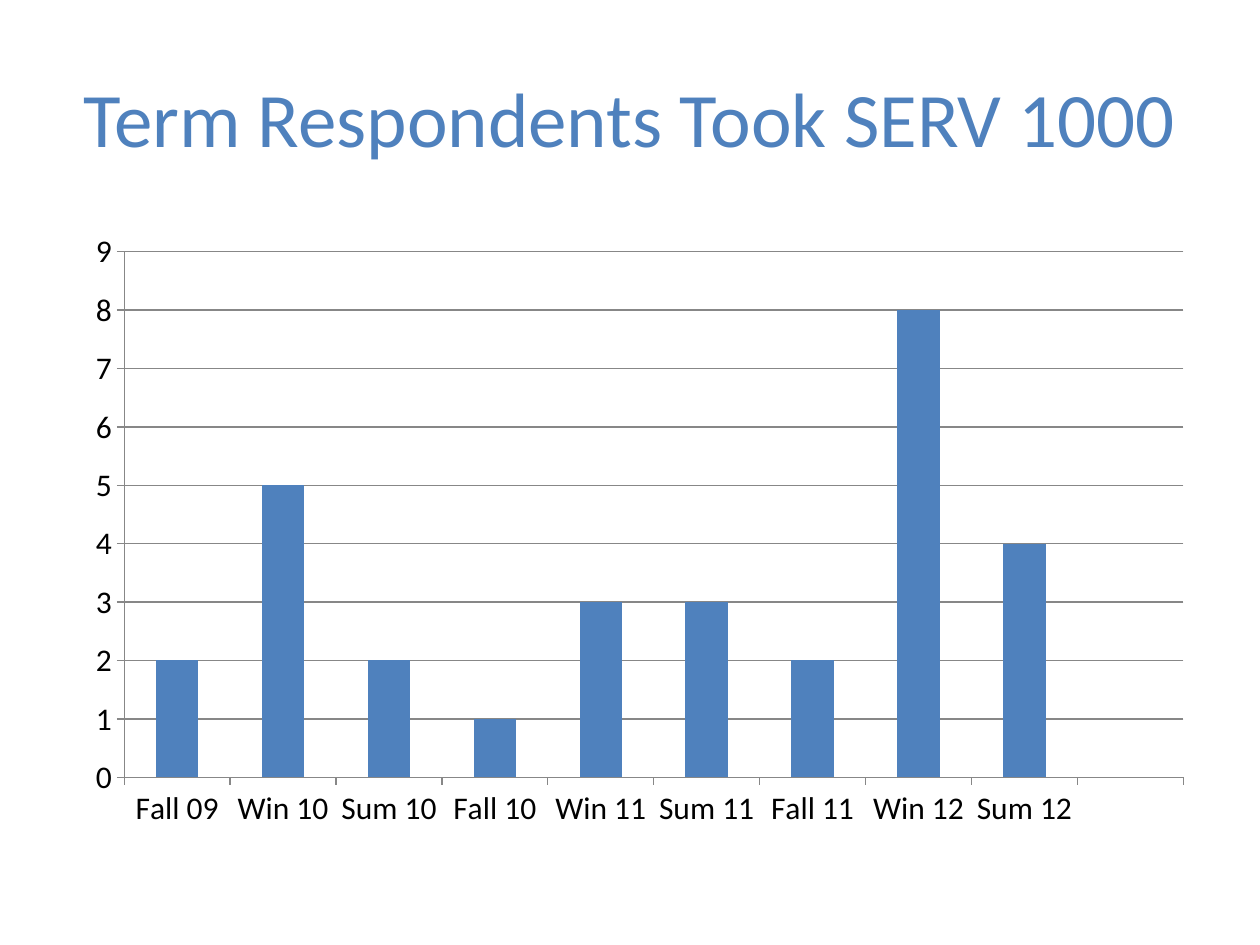
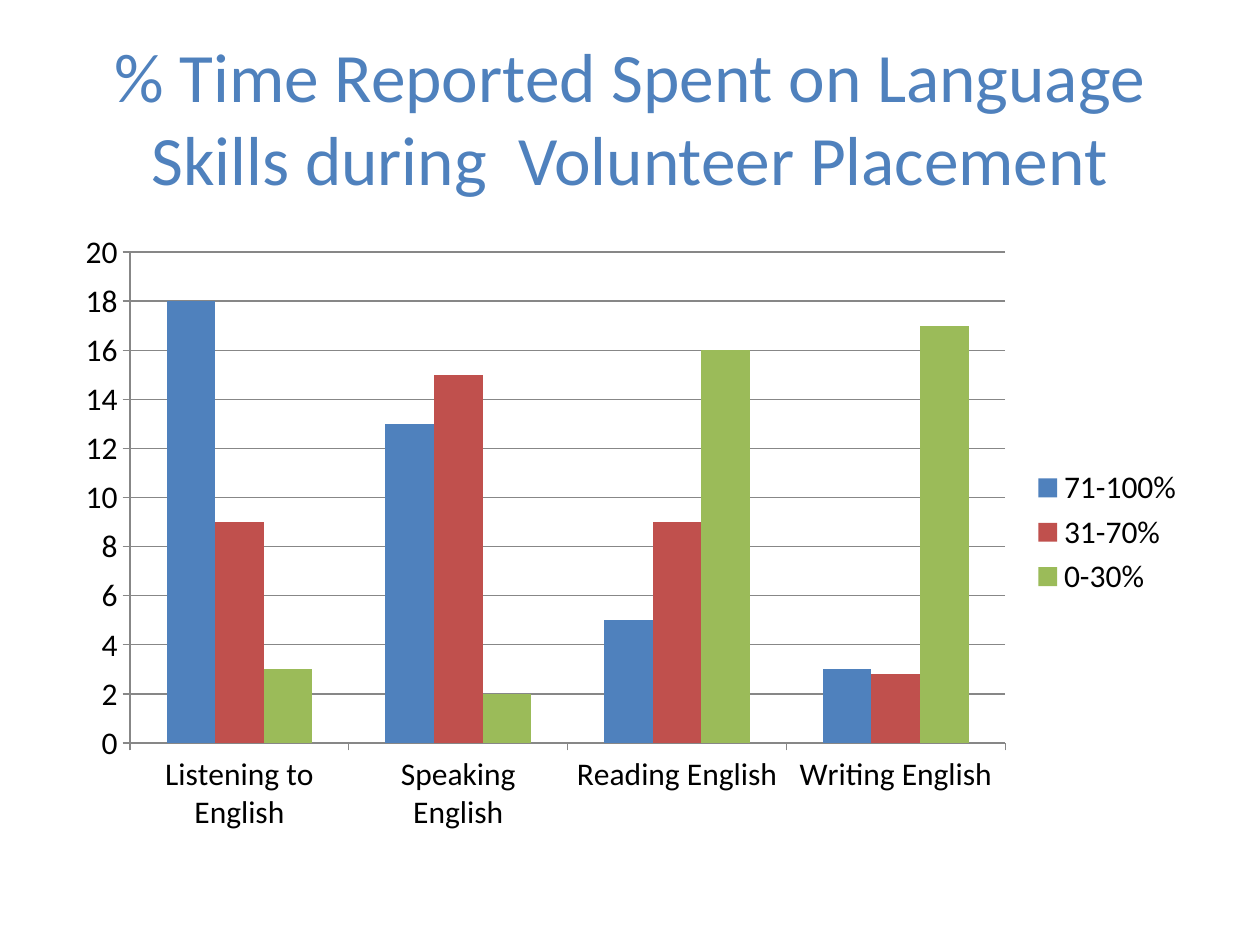
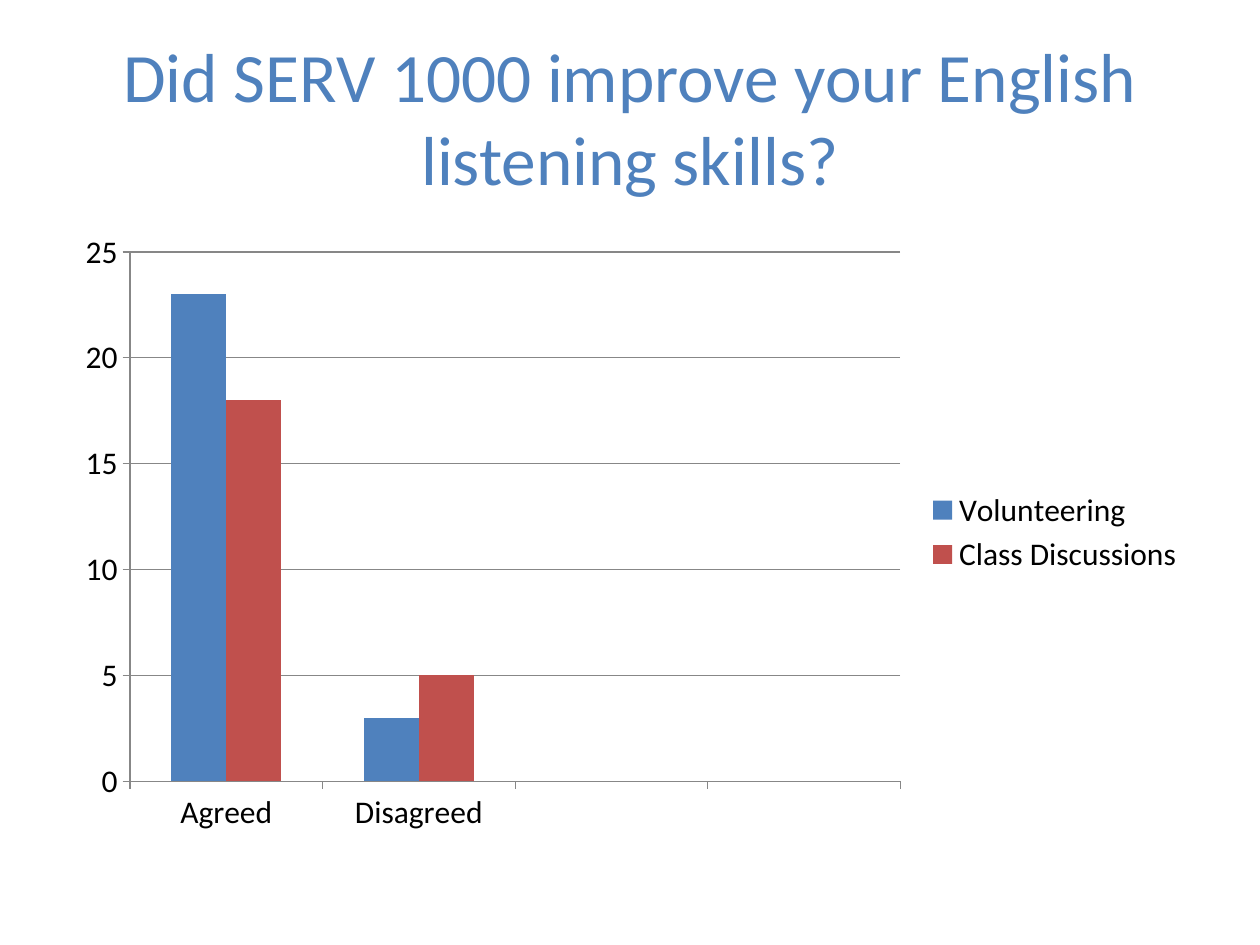
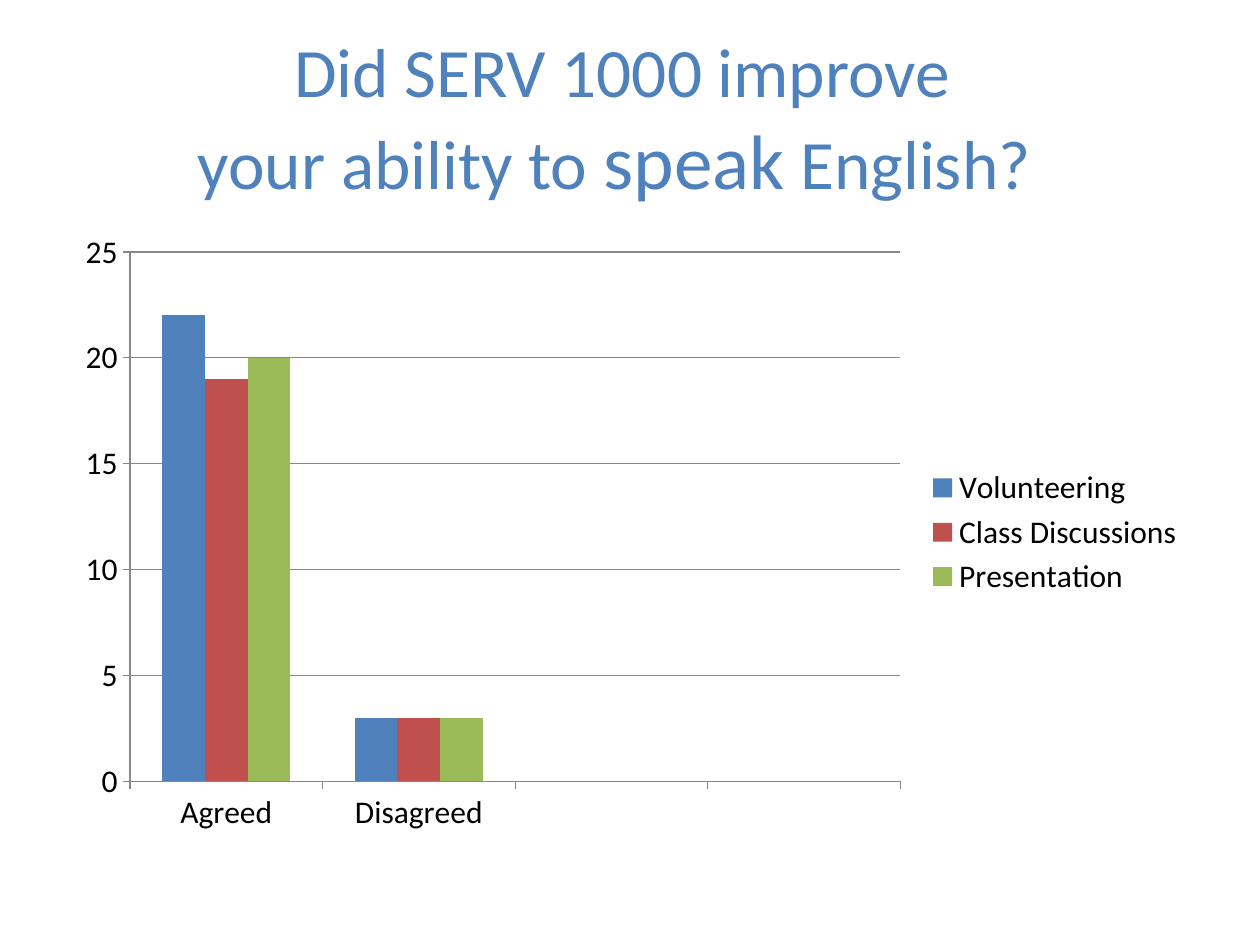
from lxml import etree
from pptx import Presentation
from pptx.chart.data import CategoryChartData
from pptx.dml.color import RGBColor
from pptx.enum.chart import XL_CHART_TYPE, XL_LEGEND_POSITION, XL_TICK_MARK
from pptx.enum.text import MSO_ANCHOR, MSO_AUTO_SIZE, PP_ALIGN
from pptx.oxml.ns import qn
from pptx.util import Emu, Pt

CLUSTERED = XL_CHART_TYPE.COLUMN_CLUSTERED
LEGEND_RIGHT = XL_LEGEND_POSITION.RIGHT
TICK_OUT = XL_TICK_MARK.OUTSIDE
MIDDLE = MSO_ANCHOR.MIDDLE
NO_FIT = MSO_AUTO_SIZE.NONE
CENTER = PP_ALIGN.CENTER

PX = 9144
FONT = "Calibri"
COLORS = {
    "title": "4F81BD",
    "text": "000000",
    "axis": "878787",
    "blue": "4F81BD",
    "red": "C0504D",
    "green": "9BBB59",
}
SERIES_COLORS = ("blue", "red", "green")
TITLE_BOX = (50, 30, 900, 125)
CHART_BOX = (50, 175, 900, 495)
LONG, SHORT, EMPHASIS = 39.6, 44, 44.1
ANSWERS = ["Agreed", "Disagreed", "", ""]

SLIDES = [
    {
        "title": [[("Term Respondents Took SERV 1000", SHORT)]],
        "cats": ["Fall 09", "Win 10", "Sum 10", "Fall 10", "Win 11",
                 "Sum 11", "Fall 11", "Win 12", "Sum 12", ""],
        "series": {
            "Series 1": [2, 5, 2, 1, 3, 3, 2, 8, 4, None],
            "Series 2": [],
            "Series 3": [],
        },
        "top": 9,
        "step": 1,
        "legend": False,
        "plot": {"x": 0.054, "y": 0.05, "w": 0.934, "h": 0.843},
    },
    {
        "title": [[("% Time Reported Spent on Language Skills during  Volunteer Placement", LONG)]],
        "cats": ["Listening to English", "Speaking English", "Reading English", "Writing English"],
        "series": {
            "71-100%": [18, 13, 5, 3],
            "31-70%": [9, 15, 9, 2.8],
            "0-30%": [3, 2, 16, 17],
        },
        "top": 20,
        "step": 2,
    },
    {
        "title": [[("Did SERV 1000 improve your English listening skills?", LONG)]],
        "cats": ANSWERS,
        "series": {
            "Volunteering": [23, 3, None, None],
            "Class Discussions": [18, 5, None, None],
            "Column1": [],
        },
        "top": 25,
        "step": 5,
    },
    {
        "title": [
            [("Did SERV 1000 improve ", LONG)],
            [("your ability to ", LONG), ("speak", EMPHASIS), (" English?  ", LONG)],
        ],
        "cats": ANSWERS,
        "series": {
            "Volunteering": [22, 3, None, None],
            "Class Discussions": [19, 3, None, None],
            "Presentation": [20, 3, None, None],
        },
        "top": 25,
        "step": 5,
    },
]


def rgb(name):
    return RGBColor.from_string(COLORS[name])


def scaled(box):
    return [Emu(length * PX) for length in box]


def format_font(font, size, color):
    font.name = FONT
    font.size = Pt(size)
    font.color.rgb = rgb(color)


def add_text(p, text, size=SHORT, color="title"):
    r = p.add_run()
    r.text = text
    format_font(r.font, size, color)


def add_title(s, box, lines):
    sp = s.shapes.title
    sp.left, sp.top, sp.width, sp.height = scaled(box)
    tf = sp.text_frame
    tf.word_wrap = True
    tf.auto_size = NO_FIT
    tf.vertical_anchor = MIDDLE
    p = tf.paragraphs[0]
    p.alignment = CENTER
    for i, line in enumerate(lines):
        if i:
            p.add_line_break()
        for text, size in line:
            add_text(p, text, size=size)


def set_plot_layout(chart, plot):
    area = chart.element.find(".//" + qn("c:plotArea"))
    for old in area.findall(qn("c:layout")):
        area.remove(old)
    layout = etree.Element(qn("c:layout"))
    area.insert(0, layout)
    manual = etree.SubElement(layout, qn("c:manualLayout"))
    values = {"layoutTarget": "inner", "xMode": "edge", "yMode": "edge", **plot}
    for tag, value in values.items():
        etree.SubElement(manual, qn("c:" + tag)).set("val", str(value))


def drop_empty_values(chart, series):
    for ser, values in zip(chart.element.iter(qn("c:ser")), series.values()):
        if not values:
            ser.remove(ser.find(qn("c:val")))


def format_axis(axis):
    axis.major_tick_mark = TICK_OUT
    axis.format.line.color.rgb = rgb("axis")
    format_font(axis.tick_labels.font, 18, "text")


def add_column_chart(s, box, cats, series, top, step, legend=True, plot=None):
    data = CategoryChartData()
    data.categories = cats
    for name, values in series.items():
        data.add_series(name, values)
    chart = s.shapes.add_chart(CLUSTERED, *scaled(box), data).chart
    chart.has_title = False
    format_font(chart.font, 18, "text")
    drop_empty_values(chart, series)

    columns = chart.plots[0]
    columns.gap_width = 150
    columns.vary_by_categories = False
    for column, color in zip(columns.series, SERIES_COLORS):
        column.format.fill.solid()
        column.format.fill.fore_color.rgb = rgb(color)

    format_axis(chart.category_axis)
    axis = chart.value_axis
    format_axis(axis)
    axis.minimum_scale = 0
    axis.maximum_scale = top
    axis.major_unit = step
    axis.has_major_gridlines = True
    axis.major_gridlines.format.line.color.rgb = rgb("axis")

    chart.has_legend = legend
    if legend:
        chart.legend.position = LEGEND_RIGHT
        chart.legend.include_in_layout = False
        format_font(chart.legend.font, 18, "text")
    if plot:
        set_plot_layout(chart, plot)


def add_chart_slide(prs, title, **chart):
    s = prs.slides.add_slide(prs.slide_layouts.get_by_name("Title Only"))
    add_title(s, TITLE_BOX, title)
    add_column_chart(s, CHART_BOX, **chart)


def main():
    prs = Presentation()
    prs.slide_width, prs.slide_height = scaled((1000, 750))
    for content in SLIDES:
        add_chart_slide(prs, **content)
    prs.save("out.pptx")


if __name__ == "__main__":
    main()
